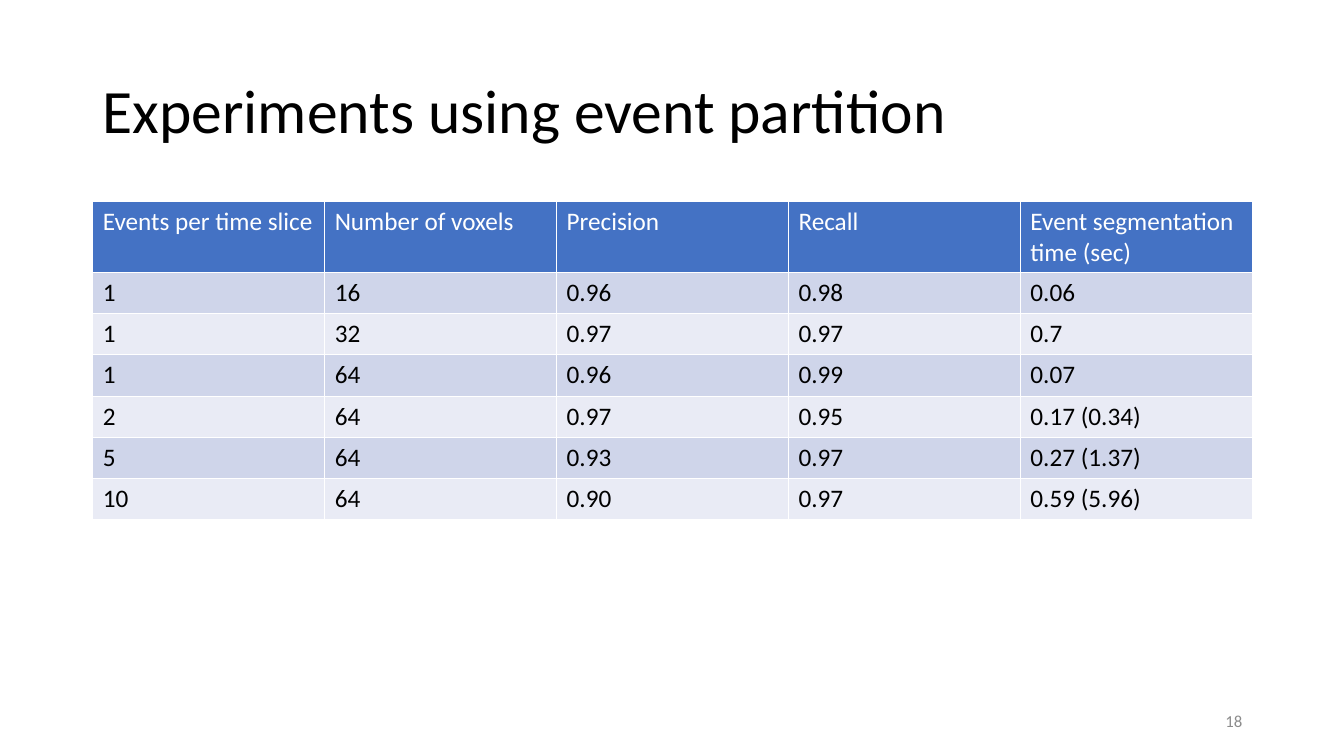
"""Build a slide with a table of event partition experiments."""
from lxml import etree
from pptx import Presentation
from pptx.dml.color import RGBColor
from pptx.enum.text import MSO_ANCHOR, PP_ALIGN
from pptx.oxml.ns import qn
from pptx.util import Inches, Pt

MIDDLE = MSO_ANCHOR.MIDDLE
LEFT, RIGHT = PP_ALIGN.LEFT, PP_ALIGN.RIGHT
FONT = "Calibri"
COLORS = {
    "text": "000000",
    "header": "4472C4",
    "header_text": "FFFFFF",
    "band_dark": "CFD5EA",
    "band_light": "E9EBF5",
    "border": "FFFFFF",
    "page_number": "8C8C8C",
}
RESULTS = [
    ["Events per time slice", "Number of voxels", "Precision", "Recall",
     "Event segmentation time (sec)"],
    ["1", "16", "0.96", "0.98", "0.06"],
    ["1", "32", "0.97", "0.97", "0.7"],
    ["1", "64", "0.96", "0.99", "0.07"],
    ["2", "64", "0.97", "0.95", "0.17 (0.34)"],
    ["5", "64", "0.93", "0.97", "0.27 (1.37)"],
    ["10", "64", "0.90", "0.97", "0.59 (5.96)"],
]


def write(frame, text, size, color, align=LEFT):
    frame.text = text
    para = frame.paragraphs[0]
    para.alignment = align
    font = para.runs[0].font
    font.name = FONT
    font.size = Pt(size)
    font.bold = False
    font.color.rgb = RGBColor.from_string(COLORS[color])
    return para


def add_borders(cell):
    properties = cell._tc.get_or_add_tcPr()
    for position, side in enumerate(("lnL", "lnR", "lnT", "lnB")):
        line = etree.Element(qn(f"a:{side}"), w=str(Pt(1)))
        fill = etree.SubElement(line, qn("a:solidFill"))
        etree.SubElement(fill, qn("a:srgbClr"), val=COLORS["border"])
        properties.insert(position, line)


deck = Presentation()
deck.slide_width = Inches(13.33)
deck.slide_height = Inches(7.5)
page = deck.slides.add_slide(deck.slide_layouts[6])

title = page.shapes.add_textbox(Inches(0.92), Inches(0.4), Inches(11.5), Inches(1.45))
title.text_frame.word_wrap = True
title.text_frame.vertical_anchor = MIDDLE
para = write(title.text_frame, "Experiments using event partition", 44, "text")
para.line_spacing = 0.9

table = page.shapes.add_table(
    len(RESULTS), len(RESULTS[0]),
    Inches(0.92), Inches(2), Inches(11.5), Inches(3.13)).table
for column in table.columns:
    column.width = Inches(2.3)
for row_index, values in enumerate(RESULTS):
    is_header = row_index == 0
    table.rows[row_index].height = Inches(0.7 if is_header else 0.41)
    band = "band_dark" if row_index % 2 else "band_light"
    for column_index, value in enumerate(values):
        cell = table.cell(row_index, column_index)
        write(cell.text_frame, value, 18, "header_text" if is_header else "text")
        cell.fill.solid()
        cell.fill.fore_color.rgb = RGBColor.from_string(
            COLORS["header" if is_header else band])
        add_borders(cell)

number = page.shapes.add_textbox(Inches(9.42), Inches(6.95), Inches(3), Inches(0.4))
number.text_frame.word_wrap = True
number.text_frame.vertical_anchor = MIDDLE
write(number.text_frame, "18", 12, "page_number", RIGHT)

deck.save("out.pptx")
